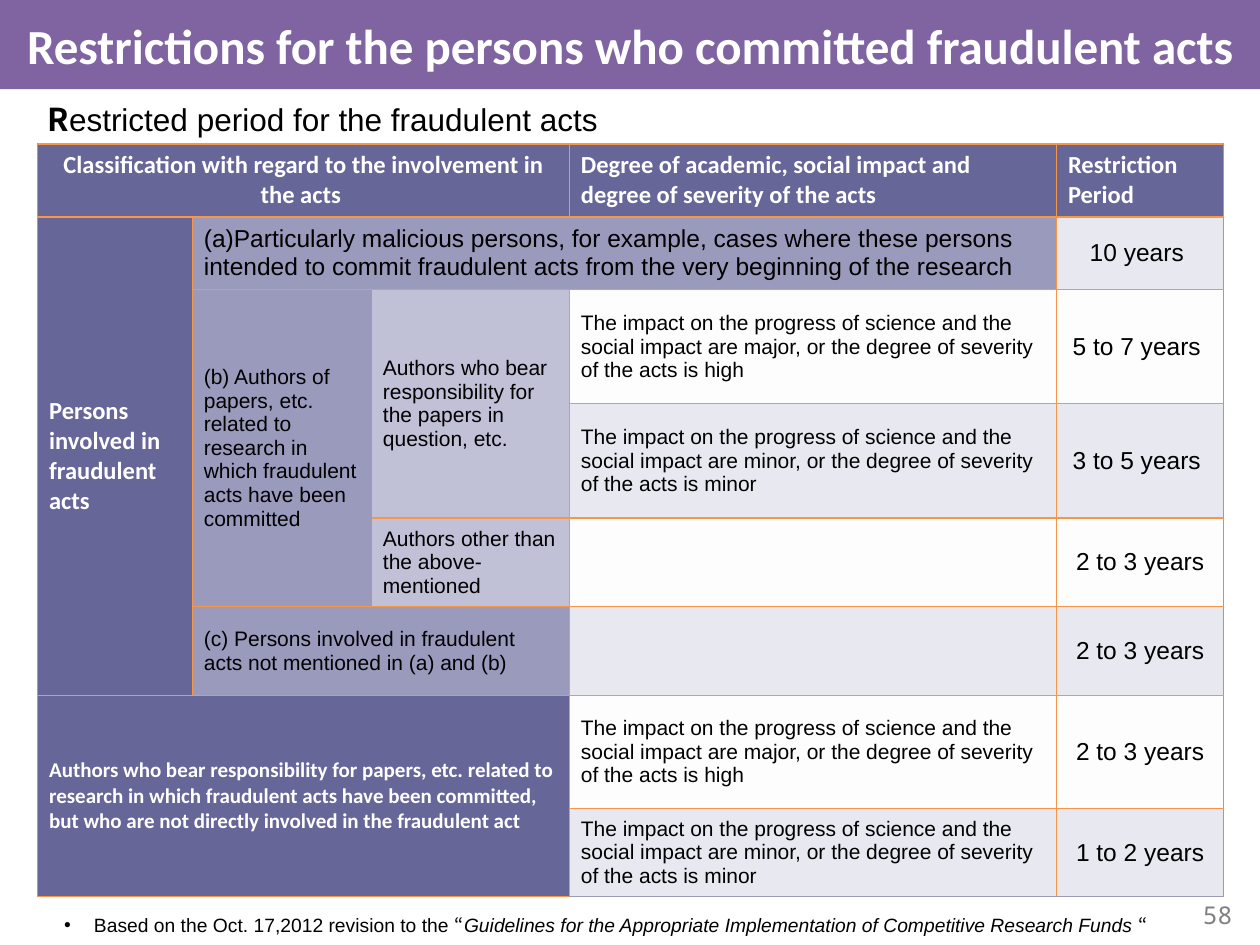
from dataclasses import dataclass

from lxml.etree import SubElement
from pptx import Presentation
from pptx.dml.color import RGBColor
from pptx.enum.text import MSO_ANCHOR, MSO_AUTO_SIZE, PP_ALIGN
from pptx.oxml.ns import qn
from pptx.util import Cm, Pt


@dataclass(frozen=True)
class Theme:
    band: str = "8064A2"
    head: str = "666699"
    mid: str = "9A9ABC"
    pale: str = "C0C0D6"
    tint: str = "E8E8F0"
    plain: str = "FDFDFD"
    rule: str = "F79646"
    white: str = "FFFFFF"
    black: str = "000000"
    grey: str = "808080"
    title: int = 28
    lead: int = 18
    big: int = 14
    small: int = 12
    note: int = 11
    sans: str = "Arial"
    bold: str = "Calibri"
    cjk: str = "Noto Sans CJK JP"
    mono: str = "Noto Sans Mono"


T = Theme()
HEAD = dict(size=T.big, font=T.bold, color=T.white, bold=True)
COLS = (3.12, 3.61, 3.99, 9.82, 3.37)
ROWS = (1.47, 1.47, 2.3, 2.3, 1.79, 1.79, 2.28, 1.78)
IMPACT = ("The impact on the progress of science and the social impact are {}, "
          "or the degree of severity of the acts is {}")
MAJOR = IMPACT.format("major", "high")
MINOR = IMPACT.format("minor", "minor")

# row, column, rows spanned, columns spanned, fill, text, format
LABELS = (
    (0, 0, 1, 3, T.head, "Classification with regard to the involvement in the acts ",
     dict(HEAD, align=PP_ALIGN.CENTER)),
    (0, 3, 1, 1, T.head, "Degree of academic, social impact and degree of severity of the acts",
     HEAD),
    (0, 4, 1, 1, T.head, "Restriction Period", HEAD),
    (1, 0, 5, 1, T.head, "Persons involved in fraudulent acts", HEAD),
    (1, 1, 1, 3, T.mid, "(a)Particularly malicious persons, for example, cases where these "
     "persons intended to commit fraudulent acts from the very beginning of the research",
     dict(size=T.big)),
    (2, 1, 3, 1, T.mid, "(b) Authors of papers, etc. related to research in which "
     "fraudulent acts have been committed", {}),
    (2, 2, 2, 1, T.pale, "Authors who bear responsibility for the papers in question, etc.", {}),
    (4, 2, 1, 1, T.pale, "Authors other than the above-mentioned", {}),
    (5, 1, 1, 2, T.mid, "(c) Persons involved in fraudulent acts not mentioned in (a) and (b)",
     {}),
    (6, 0, 2, 3, T.head, "Authors who bear responsibility for papers, etc. related to research "
     "in which fraudulent acts have been committed, but who are not directly involved in the "
     "fraudulent act", dict(HEAD, size=T.small)),
)
# degree and period for each row below the heading
TERMS = (
    (None, "10 years "),
    (MAJOR, "5 to 7 years "),
    (MINOR, "3 to 5 years "),
    ("", "2 to 3 years"),
    ("", "2 to 3 years"),
    (MAJOR, "2 to 3 years"),
    (MINOR, "1 to 2 years"),
)


def paint(fill, color):
    fill.solid()
    fill.fore_color.rgb = RGBColor.from_string(color)


def write(para, text, size=T.small, font=T.sans, color=T.black,
          bold=False, italic=False, align=None):
    """Add one run to a paragraph."""
    run = para.add_run()
    run.text = text
    face = run.font
    face.size, face.name, face.bold, face.italic = Pt(size), font, bold, italic
    face.color.rgb = RGBColor.from_string(color)
    if align is not None:
        para.alignment = align


def place(shape, left, top, width, height):
    shape.left, shape.top = Cm(left), Cm(top)
    shape.width, shape.height = Cm(width), Cm(height)


def add_box(slide, left, top, width, height):
    """Add a wrapped text box and return its first paragraph."""
    box = slide.shapes.add_textbox(Cm(left), Cm(top), Cm(width), Cm(height))
    frame = box.text_frame
    frame.word_wrap = True
    frame.vertical_anchor = MSO_ANCHOR.MIDDLE
    return frame.paragraphs[0]


def edge(cell, side, color, width=1.0):
    """Draw one border of a cell, or hide it when color is None."""
    line = SubElement(cell._tc.get_or_add_tcPr(), qn(f"a:ln{side}"), w=str(Pt(width)))
    if color is None:
        SubElement(line, qn("a:noFill"))
    else:
        SubElement(SubElement(line, qn("a:solidFill")), qn("a:srgbClr"), val=color)


def frame_cell(cell, row, col):
    """Rule a cell: orange inside, thin outer edges, none between (b) and its parts."""
    inner = 2 <= row <= 4
    outer = {"L": col == 0, "R": col == len(COLS) - 1, "B": row == len(ROWS) - 1}
    for side in "LRTB":
        if inner and (col, side) in ((1, "R"), (2, "L")):
            edge(cell, side, None)
        elif outer.get(side):
            edge(cell, side, T.mid, 0.5)
        else:
            edge(cell, side, T.rule)


def fill_cell(cell, text, shade, **form):
    paint(cell.fill, shade)
    cell.vertical_anchor = MSO_ANCHOR.MIDDLE
    cell.margin_left = cell.margin_right = Cm(0.23)
    if text:
        write(cell.text_frame.paragraphs[0], text, **form)


def add_grid(slide):
    table = slide.shapes.add_table(len(ROWS), len(COLS), Cm(0.76), Cm(2.9),
                                   Cm(sum(COLS)), Cm(sum(ROWS))).table
    table.first_row = table.horz_banding = False
    for col, width in zip(table.columns, COLS):
        col.width = Cm(width)
    for row, height in zip(table.rows, ROWS):
        row.height = Cm(height)
    for row in range(len(ROWS)):
        for col in range(len(COLS)):
            frame_cell(table.cell(row, col), row, col)

    for row, col, down, over, shade, text, form in LABELS:
        cell = table.cell(row, col)
        if down * over > 1:
            cell.merge(table.cell(row + down - 1, col + over - 1))
        fill_cell(cell, text, shade, **form)
    for row, (degree, period) in enumerate(TERMS, 1):
        shade = T.tint if row % 2 else T.plain
        if degree is not None:
            fill_cell(table.cell(row, 3), degree, shade)
        fill_cell(table.cell(row, 4), period, shade, size=T.big, align=PP_ALIGN.CENTER)


def set_title(shape):
    place(shape, 0, 0, 25.4, 1.8)
    paint(shape.fill, T.band)
    frame = shape.text_frame
    frame.auto_size = MSO_AUTO_SIZE.NONE
    frame.word_wrap = False
    frame.vertical_anchor = MSO_ANCHOR.MIDDLE
    write(frame.paragraphs[0], "Restrictions for the persons who committed fraudulent acts",
          **dict(HEAD, size=T.title, align=PP_ALIGN.CENTER))


def set_note(shape):
    place(shape, 1.04, 18.29, 24.36, 0.74)
    shape.text_frame.auto_size = MSO_AUTO_SIZE.NONE
    para = shape.text_frame.paragraphs[0]
    para.space_before = Pt(0)
    props = para._p.get_or_add_pPr()
    props.set("marL", str(Cm(0.6)))
    props.set("indent", str(-Cm(0.6)))
    write(para, "Based on the Oct. 17,2012 revision to the ", size=T.note)
    write(para, "“", size=T.note, font=T.cjk)
    write(para, "Guidelines for the Appropriate Implementation of Competitive Research Funds ",
          size=T.note, italic=True)
    write(para, "“", size=T.note, font=T.cjk)


def main():
    deck = Presentation()
    deck.slide_width, deck.slide_height = Cm(25.4), Cm(19.05)
    slide = deck.slides.add_slide(deck.slide_layouts[1])
    set_title(slide.shapes.title)
    lead = add_box(slide, 0.71, 1.88, 14.8, 1.02)
    write(lead, "R", size=T.lead, font=T.cjk, bold=True)
    write(lead, "estricted period for the fraudulent acts", size=T.lead)
    add_grid(slide)
    set_note(slide.placeholders[1])
    page = add_box(slide, 24, 18, 1.42, 0.86)
    write(page, "58", size=T.big, font=T.mono, color=T.grey)
    deck.save("out.pptx")


if __name__ == "__main__":
    main()
